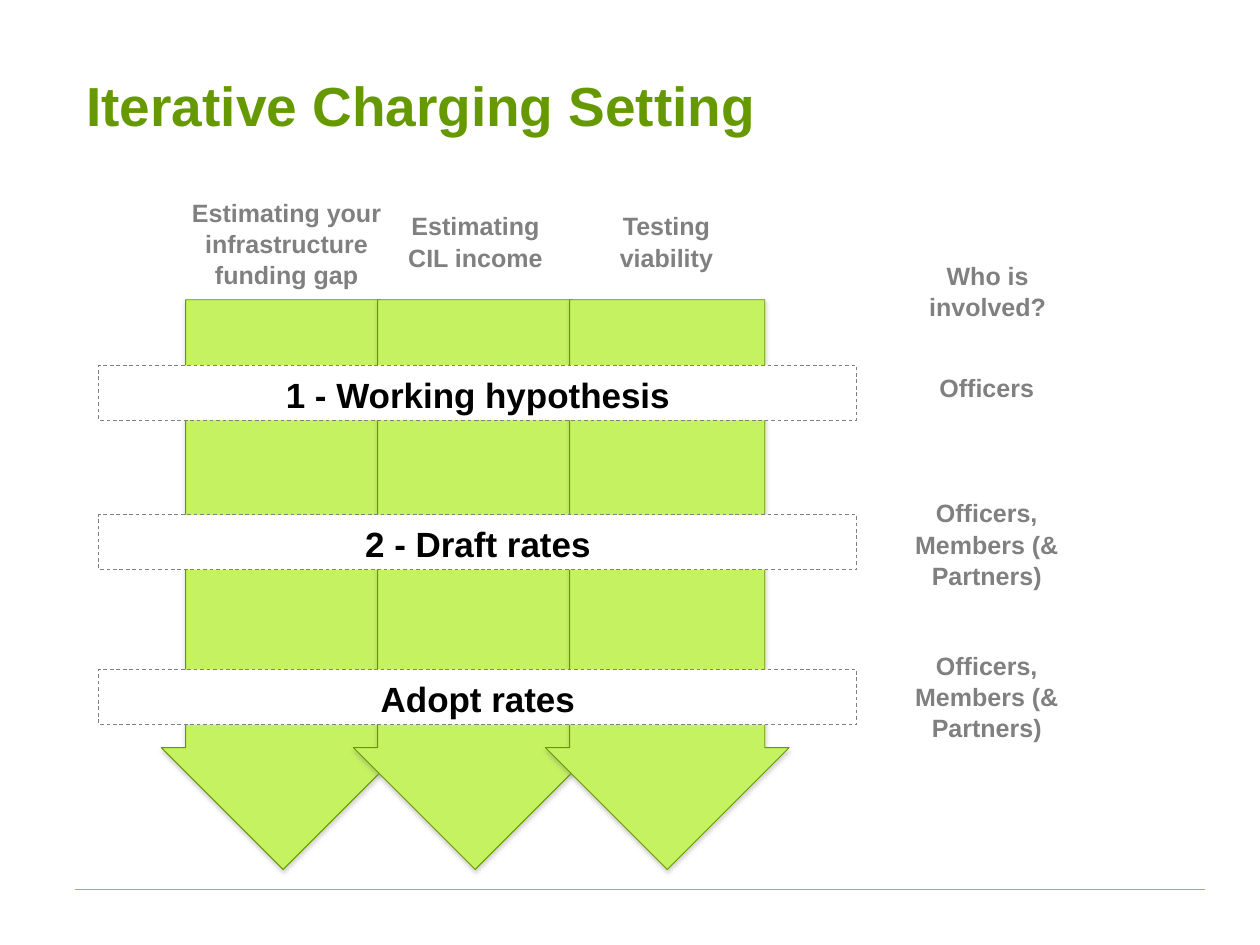
"""Build the iterative charging setting slide."""
import pptx
import pptx.dml.color
import pptx.enum.dml
import pptx.enum.shapes
import pptx.enum.text
import pptx.oxml
import pptx.oxml.ns
import pptx.util

Cm = pptx.util.Cm
Pt = pptx.util.Pt
SHAPE = pptx.enum.shapes.MSO_SHAPE
ALIGN = pptx.enum.text.PP_ALIGN
ANCHOR = pptx.enum.text.MSO_ANCHOR
AUTO_SIZE = pptx.enum.text.MSO_AUTO_SIZE

SHADOW = (
    f'<a:effectLst {pptx.oxml.ns.nsdecls("a")}>'
    '<a:outerShdw blurRad="39370" dist="22860" dir="5400000" rotWithShape="0">'
    '<a:srgbClr val="808080"><a:alpha val="35000"/></a:srgbClr>'
    '</a:outerShdw></a:effectLst>'
)
NO_EFFECT = f'<a:effectLst {pptx.oxml.ns.nsdecls("a")}/>'


def colour(hex_code):
    return pptx.dml.color.RGBColor.from_string(hex_code)


class ChargingSlide:
    font = "Arial"
    green = "669900"
    lime = "C5F260"
    rule_green = "99CC00"
    grey = "808080"
    black = "000000"
    white = "FFFFFF"
    thin = Pt(0.75)

    def __init__(self, slide):
        self.shapes = slide.shapes

    def set_text(self, shape, text, size, hex_code, align=ALIGN.CENTER, anchor=ANCHOR.TOP,
                 auto_size=AUTO_SIZE.SHAPE_TO_FIT_TEXT):
        frame = shape.text_frame
        frame.word_wrap = True
        frame.auto_size = auto_size
        frame.vertical_anchor = anchor
        frame.margin_left = frame.margin_right = Cm(0.33)
        frame.margin_top = frame.margin_bottom = Cm(0.18)
        paragraph = frame.paragraphs[0]
        paragraph.text = text
        paragraph.alignment = align
        paragraph.line_spacing = 1.04
        paragraph.font.name = self.font
        paragraph.font.size = Pt(size)
        paragraph.font.bold = True
        paragraph.font.color.rgb = colour(hex_code)

    def paint(self, shape, fill, line):
        shape.fill.solid()
        shape.fill.fore_color.rgb = colour(fill)
        shape.line.color.rgb = colour(line)
        shape.line.width = self.thin

    def rule(self, left, right, top):
        rule = self.shapes.add_connector(
            pptx.enum.shapes.MSO_CONNECTOR.STRAIGHT, Cm(left), Cm(top), Cm(right), Cm(top))
        rule.line.color.rgb = colour(self.rule_green)
        rule.line.width = self.thin
        rule._element.spPr.append(pptx.oxml.parse_xml(NO_EFFECT))

    def title(self, text, left, top, width, height):
        title = self.shapes.add_textbox(Cm(left), Cm(top), Cm(width), Cm(height))
        self.set_text(title, text, 44, self.green, ALIGN.LEFT, ANCHOR.MIDDLE, AUTO_SIZE.NONE)

    def label(self, text, left, top, width, height):
        label = self.shapes.add_textbox(Cm(left), Cm(top), Cm(width), Cm(height))
        self.set_text(label, text, 20, self.grey)

    def arrow(self, left, top, length, breadth):
        arrow = self.shapes.add_shape(
            SHAPE.RIGHT_ARROW, Cm(left), Cm(top), Cm(length), Cm(breadth))
        arrow.rotation = 90
        arrow.adjustments[0] = 0.8
        arrow.adjustments[1] = 0.5
        self.paint(arrow, self.lime, self.green)
        arrow._element.spPr.append(pptx.oxml.parse_xml(SHADOW))

    def stage(self, text, left, top, width, height):
        stage = self.shapes.add_shape(
            SHAPE.RECTANGLE, Cm(left), Cm(top), Cm(width), Cm(height))
        stage.shadow.inherit = False
        self.paint(stage, self.white, self.grey)
        stage.line.dash_style = pptx.enum.dml.MSO_LINE.DASH
        self.set_text(stage, text, 28, self.black)


def main():
    deck = pptx.Presentation()
    deck.slide_width = Cm(35.56)
    deck.slide_height = Cm(26.67)
    charging = ChargingSlide(deck.slides.add_slide(deck.slide_layouts[6]))

    charging.rule(2.11, 34.01, 25.1)
    charging.title("Iterative Charging Setting", 2.11, 1.07, 32, 3.66)

    for strand in range(3):
        charging.arrow(-0.05 + 5.42 * strand, 13.06, 16.08, 6.88)

    for heading, left, top, width, height in (
        ("Estimating your infrastructure funding gap", 4.85, 5.36, 6.48, 2.9),
        ("Estimating CIL income", 11.02, 5.74, 4.8, 2.03),
        ("Testing viability", 16.41, 5.74, 4.8, 2.03),
        ("Who is involved?", 24.74, 7.14, 6.27, 2.06),
    ):
        charging.label(heading, left, top, width, height)

    partners = "Officers, Members (& Partners)"
    for stage, top, people, people_top, people_height in (
        ("1 - Working hypothesis", 10.31, "Officers", 10.31, 1.19),
        ("2 - Draft rates", 14.53, partners, 13.84, 2.9),
        ("Adopt rates", 18.9, partners, 18.14, 2.9),
    ):
        charging.stage(stage, 2.79, top, 21.39, 1.55)
        charging.label(people, 25.45, people_top, 4.8, people_height)

    deck.save("out.pptx")


if __name__ == "__main__":
    main()
